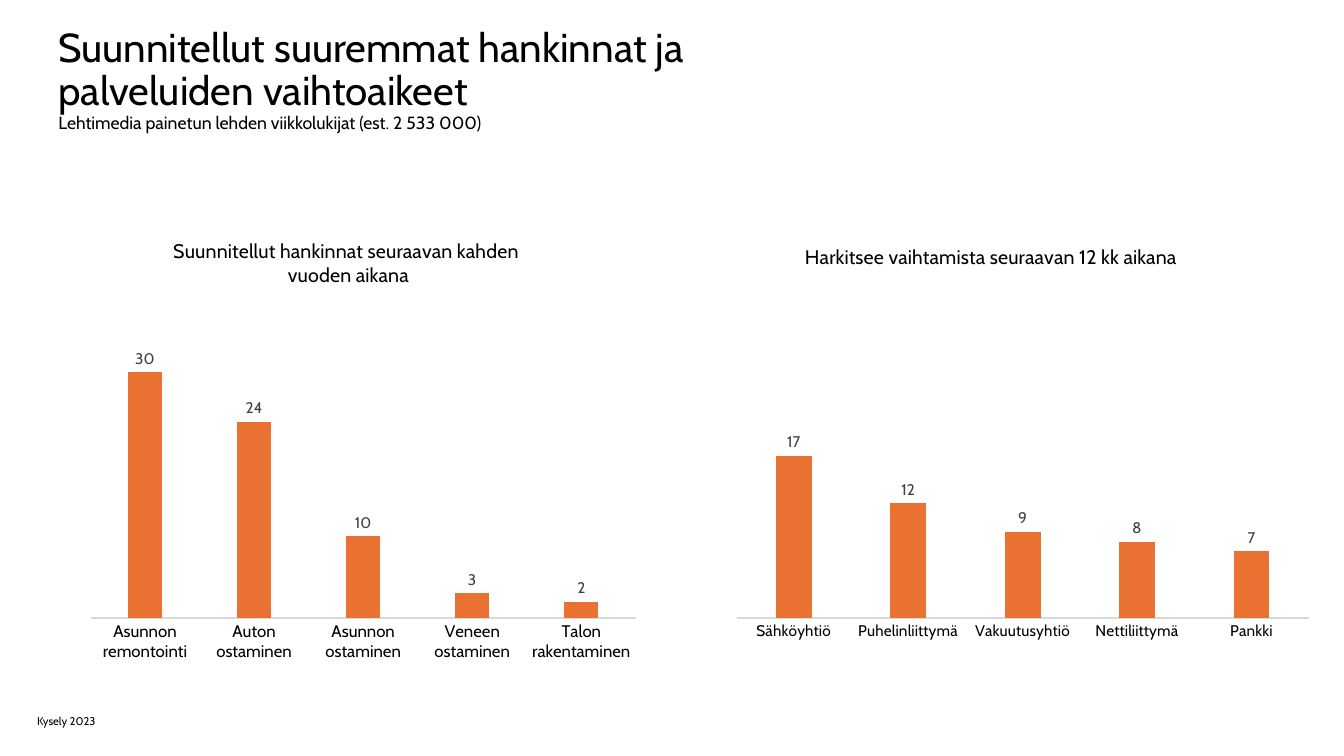
import pptx
import pptx.chart.data
import pptx.dml.color
import pptx.enum.chart
import pptx.enum.text
import pptx.oxml
import pptx.oxml.ns
import pptx.util

Pt = pptx.util.Pt


def rgb(hex_string):
    return pptx.dml.color.RGBColor.from_string(hex_string)


def layout_xml(**values):
    """Manual chart layout; every value is a fraction of the chart."""
    inner = '<c:layoutTarget val="inner"/>' if "w" in values else ""
    modes = '<c:xMode val="edge"/><c:yMode val="edge"/>'
    places = "".join(f'<c:{key} val="{value}"/>' for key, value in values.items())
    return pptx.oxml.parse_xml(
        f'<c:layout {pptx.oxml.ns.nsdecls("c")}>'
        f"<c:manualLayout>{inner}{modes}{places}</c:manualLayout></c:layout>")


class SlideBuilder:
    FONT = "Cabin"
    INK = "000000"
    BAR = "E97132"
    LABEL = "404040"
    AXIS = "D9D9D9"

    def __init__(self, slide):
        self.slide = slide

    def style(self, font, size, color=INK):
        font.name = self.FONT
        font.size = Pt(size)
        font.bold = False
        font.color.rgb = rgb(color)

    def text(self, box, lines, spacing=1.0, bottom_inset=3.6):
        """One paragraph of (text, size) lines, centred vertically."""
        frame = self.slide.shapes.add_textbox(*map(Pt, box)).text_frame
        frame.word_wrap = True
        frame.vertical_anchor = pptx.enum.text.MSO_ANCHOR.MIDDLE
        frame.margin_bottom = Pt(bottom_inset)
        paragraph = frame.paragraphs[0]
        paragraph.line_spacing = spacing
        for index, (line, size) in enumerate(lines):
            if index:
                paragraph.add_line_break()
            run = paragraph.add_run()
            run.text = line
            self.style(run.font, size)

    def column_chart(self, box, title_lines, title_at, shares, category_size, top_value):
        data = pptx.chart.data.CategoryChartData()
        data.categories = list(shares)
        data.add_series("Series 1", list(shares.values()))
        chart = self.slide.shapes.add_chart(
            pptx.enum.chart.XL_CHART_TYPE.COLUMN_CLUSTERED, *map(Pt, box), data).chart
        chart.has_legend = False
        self.style(chart.font, 10)

        # Title
        title = chart.chart_title
        frame = title.text_frame
        for index, line in enumerate(title_lines):
            paragraph = frame.add_paragraph() if index else frame.paragraphs[0]
            paragraph.alignment = pptx.enum.text.PP_ALIGN.CENTER
            run = paragraph.add_run()
            run.text = line
            self.style(run.font, 14)
        title_xml = title._element
        for old in title_xml.findall(pptx.oxml.ns.qn("c:layout")):
            title_xml.remove(old)
        title_xml.find(pptx.oxml.ns.qn("c:tx")).addnext(
            layout_xml(x=title_at[0], y=title_at[1]))

        # Plot area
        plot_area = chart._chartSpace.chart.plotArea
        for old in plot_area.findall(pptx.oxml.ns.qn("c:layout")):
            plot_area.remove(old)
        plot_area.insert(0, layout_xml(x=0.067, y=0.239, w=0.911, h=0.618))

        # Axes
        categories = chart.category_axis
        categories.major_tick_mark = pptx.enum.chart.XL_TICK_MARK.NONE
        categories.format.line.color.rgb = rgb(self.AXIS)
        categories.format.line.width = Pt(0.75)
        self.style(categories.tick_labels.font, category_size)
        values = chart.value_axis
        values.visible = False
        values.has_major_gridlines = False
        values.minimum_scale = 0
        values.maximum_scale = top_value

        # Columns and their labels
        plot = chart.plots[0]
        plot.vary_by_categories = False
        plot.gap_width = 219
        plot.overlap = -27
        columns = plot.series[0]
        columns.format.fill.solid()
        columns.format.fill.fore_color.rgb = rgb(self.BAR)
        labels = columns.data_labels
        labels.show_value = True
        labels.position = pptx.enum.chart.XL_LABEL_POSITION.OUTSIDE_END
        self.style(labels.font, 11, self.LABEL)


def main():
    deck = pptx.Presentation()
    deck.slide_width, deck.slide_height = Pt(960), Pt(540)
    builder = SlideBuilder(deck.slides.add_slide(deck.slide_layouts[6]))
    chart_top, chart_height = 157.7, 331.2

    # Heading
    builder.text((34.6, 35, 890, 58.3), [
        ("Suunnitellut suuremmat hankinnat ja ", 28.8),
        ("palveluiden vaihtoaikeet", 28.8),
        ("Lehtimedia painetun lehden viikkolukijat (est. 2 533 000)", 12.6),
    ], spacing=0.9, bottom_inset=17)

    # Planned purchases
    builder.column_chart(
        (36, chart_top, 427.7, chart_height),
        ["Suunnitellut hankinnat seuraavan kahden ", "vuoden aikana"], (0.2, 0.03),
        {"Asunnon remontointi": 30, "Auton ostaminen": 24, "Asunnon ostaminen": 10,
         "Veneen ostaminen": 3, "Talon rakentaminen": 2},
        category_size=12, top_value=35)

    # Services considered for switching
    builder.column_chart(
        (496.1, chart_top, 448.6, chart_height),
        ["Harkitsee vaihtamista seuraavan 12 kk aikana"], (0.17, 0.04),
        {"Sähköyhtiö": 17, "Puhelinliittymä": 12, "Vakuutusyhtiö": 9,
         "Nettiliittymä": 8, "Pankki": 7},
        category_size=11, top_value=30)

    # Source of the figures
    builder.text((19.4, 500.5, 75.6, 28.8), [("Kysely 2023", 8)])

    deck.save("out.pptx")


if __name__ == "__main__":
    main()
